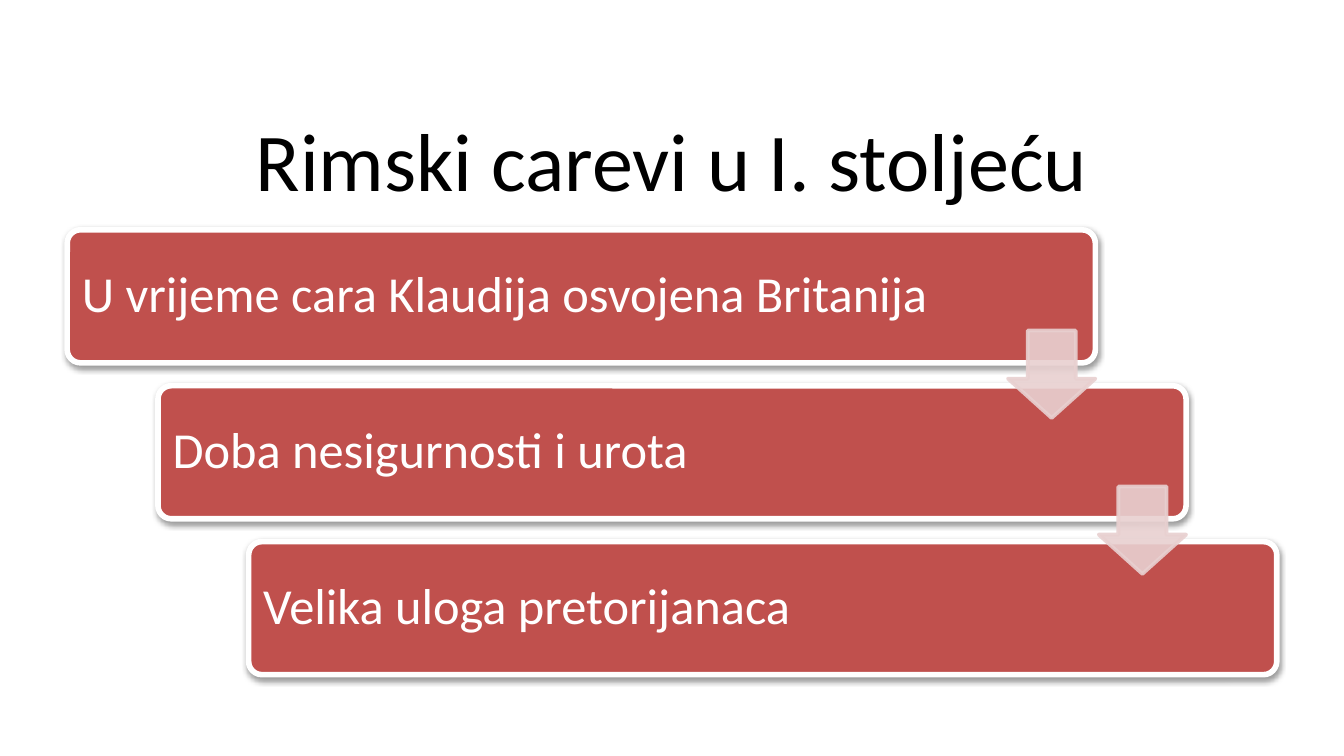
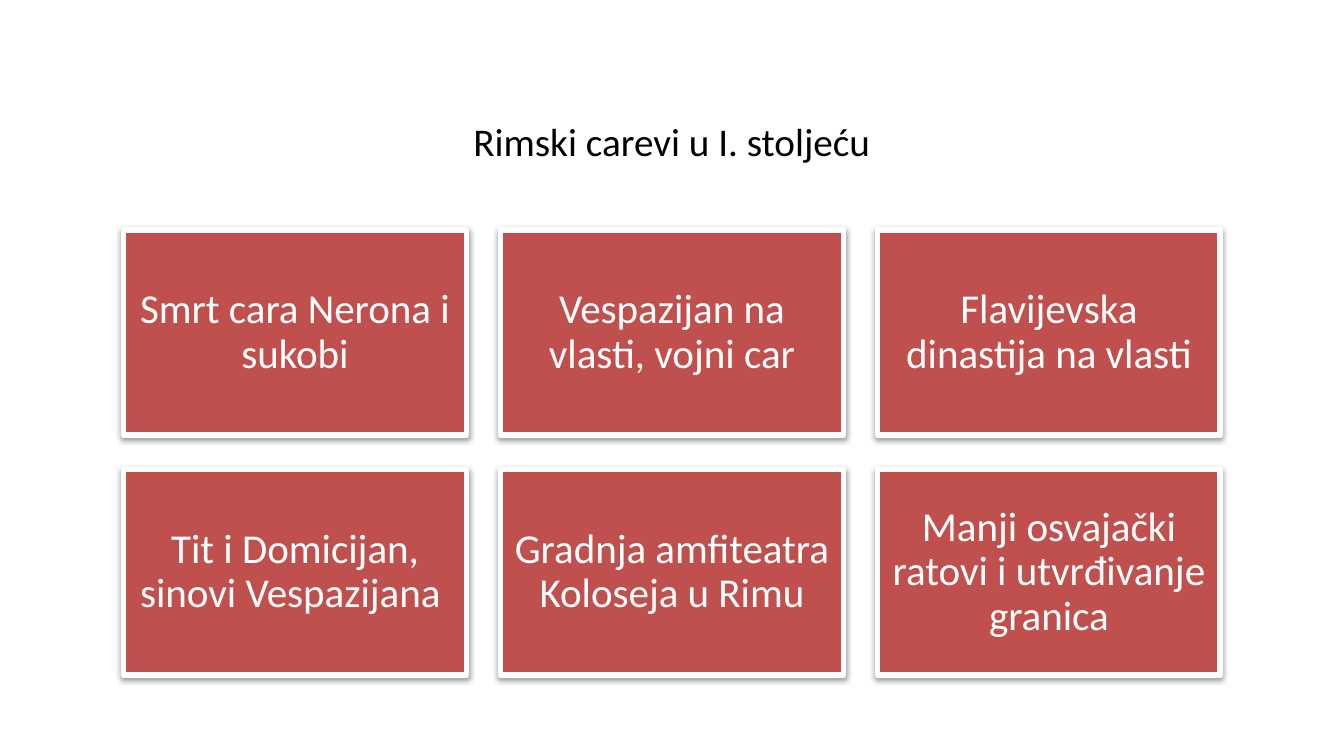
import pptx
import pptx.util
import pptx.dml.color
import pptx.enum.shapes
import pptx.enum.text
import pptx.oxml
import pptx.oxml.ns
from dataclasses import dataclass


@dataclass(frozen=True)
class Theme:
    font: str = "Calibri"
    black: str = "000000"
    white: str = "FFFFFF"
    red: str = "C0504D"
    pink: str = "E8D0D0"
    title: int = 44
    small_title: int = 21
    bar: int = 27
    card: int = 22


theme = Theme()
PX = 4572  # 200 px to the inch
TITLE = "Rimski carevi u I. stoljeću"
MSO = pptx.enum.shapes.MSO_SHAPE
ALIGN = pptx.enum.text.PP_ALIGN
A_NS = pptx.oxml.ns.nsdecls("a")
SHADOW = (f'<a:effectLst {A_NS}><a:outerShdw blurRad="40000" dist="20000" dir="5400000" '
          'rotWithShape="0"><a:srgbClr val="000000"><a:alpha val="38000"/></a:srgbClr>'
          '</a:outerShdw></a:effectLst>')


def write(sp, text, size, color, align, margins):
    """Fill the shape with one middle-anchored paragraph; margins are left, top, right, bottom."""
    tf = sp.text_frame
    sides = ("margin_left", "margin_top", "margin_right", "margin_bottom")
    frame = {"word_wrap": True, "auto_size": pptx.enum.text.MSO_AUTO_SIZE.NONE,
             "vertical_anchor": pptx.enum.text.MSO_ANCHOR.MIDDLE,
             **{side: m * PX for side, m in zip(sides, margins)}}
    for name, value in frame.items():
        setattr(tf, name, value)
    p = tf.paragraphs[0]
    p.alignment, p.line_spacing = align, 0.9
    r = p.add_run()
    r.text = text
    for name, value in {"name": theme.font, "size": pptx.util.Pt(size), "bold": False}.items():
        setattr(r.font, name, value)
    r.font.color.rgb = pptx.dml.color.RGBColor.from_string(color)


def add_box(s, kind, box, fill, line, width):
    """Add a filled, outlined preset shape without a shadow."""
    sp = s.shapes.add_shape(kind, *(v * PX for v in box))
    sp.shadow.inherit = False
    sp.fill.solid()
    sp.fill.fore_color.rgb = pptx.dml.color.RGBColor.from_string(fill)
    sp.line.color.rgb = pptx.dml.color.RGBColor.from_string(line)
    sp.line.width = pptx.util.Pt(width)
    return sp


prs = pptx.Presentation()
prs.slide_width, prs.slide_height = 2000 * PX, 1125 * PX

# Content of both slides; the smaller title sits higher in its box
bars = ["U vrijeme cara Klaudija osvojena Britanija",
        "Doba nesigurnosti i urota",
        "Velika uloga pretorijanaca"]
cards = ["Smrt cara Nerona i sukobi",
         "Vespazijan na vlasti, vojni car",
         "Flavijevska dinastija na vlasti",
         "Tit i Domicijan, sinovi Vespazijana ",
         "Gradnja amfiteatra Koloseja u Rimu",
         "Manji osvajački ratovi i utvrđivanje granica"]
bar_boxes = [(100 + 135 * i, 342 + 232 * i, 1530, 198) for i in range(3)]
card_boxes = [(184 + 561 * (i % 3), 342 + 357 * (i // 3), 510, 306) for i in range(6)]
slides = [
    (theme.title, 10, MSO.ROUNDED_RECTANGLE, bars, bar_boxes, theme.bar, ALIGN.LEFT, 16),
    (theme.small_title, 74, MSO.RECTANGLE, cards, card_boxes, theme.card, ALIGN.CENTER, 18),
]

for title_size, title_bottom, kind, texts, boxes, size, align, margin in slides:
    s = prs.slides.add_slide(prs.slide_layouts[5])

    # Title
    title = s.shapes.title
    title.left, title.top, title.width, title.height = (v * PX for v in (100, 168, 1800, 156))
    write(title, TITLE, title_size, theme.black, ALIGN.CENTER, (20, 10, 20, title_bottom))

    # Red boxes with a soft shadow
    for text, box in zip(texts, boxes):
        sp = add_box(s, kind, box, theme.red, theme.white, 3)
        if kind == MSO.ROUNDED_RECTANGLE:
            sp.adjustments[0] = 0.1
        effects = sp._element.spPr.find(pptx.oxml.ns.qn("a:effectLst"))
        effects.getparent().replace(effects, pptx.oxml.parse_xml(SHADOW))
        write(sp, text, size, theme.white, align, [margin] * 4)

# Translucent arrows from each step to the next
for i in range(len(bars) - 1):
    sp = add_box(prs.slides[0], MSO.DOWN_ARROW, (1500 + 135 * i, 492 + 232 * i, 130, 130),
                 theme.pink, theme.pink, 2)
    sp.adjustments[0], sp.adjustments[1] = 0.55, 0.45
    for color in sp._element.spPr.iter(pptx.oxml.ns.qn("a:srgbClr")):
        color.append(pptx.oxml.parse_xml(f'<a:alpha {A_NS} val="90000"/>'))

prs.save("out.pptx")
